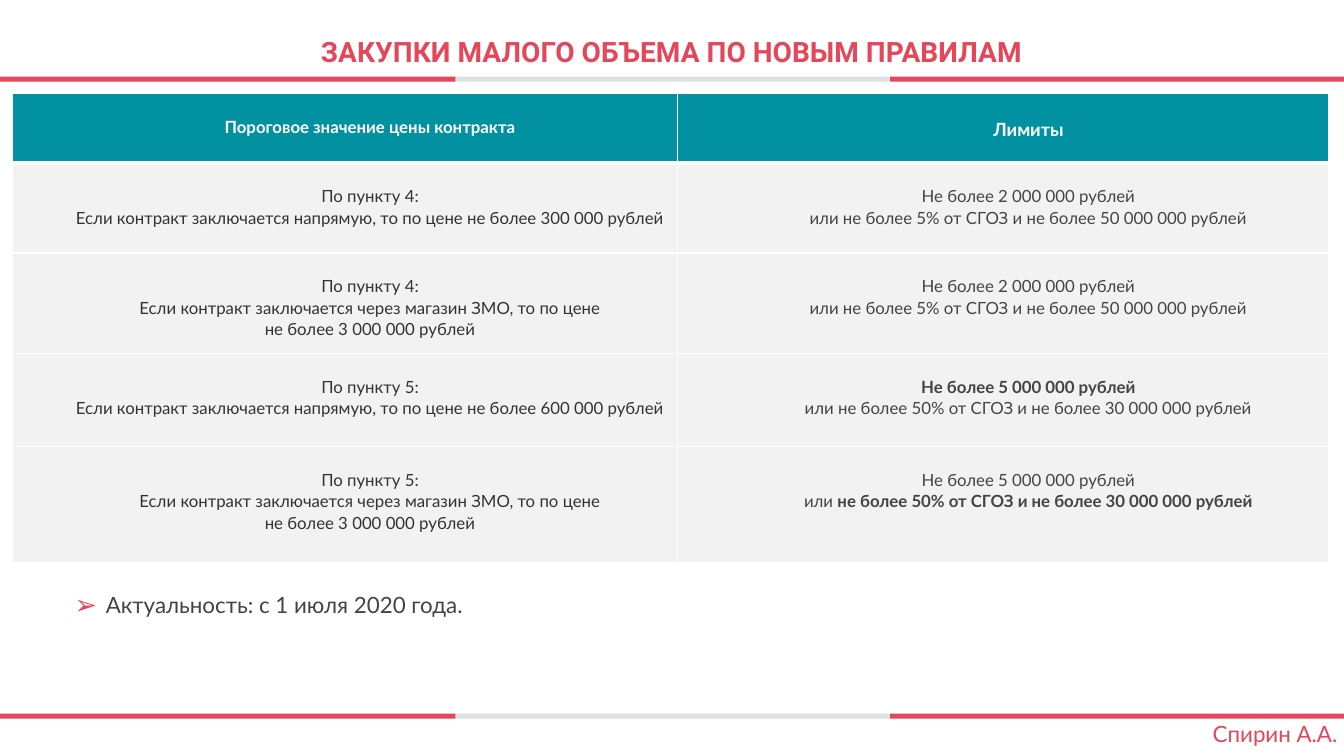
from pptx import Presentation, util as u
from pptx.dml.color import RGBColor
from pptx.enum import shapes, text
from pptx.oxml import parse_xml
from pptx.oxml.ns import nsdecls

WIDTH, HEIGHT = 13.33, 7.5
COLORS = {"red": "E4465A", "grey": "DBE1E4", "teal": "0291A0", "row": "F2F2F2",
          "white": "FFFFFF", "dark": "333333", "text": "444444"}
BAND_STOPS = (0, 4.52, 8.83, WIDTH)
COLUMNS = (6.6, 6.46)
ROWS = (0.69, 0.89, 1, 0.92, 1.15)
CELL_LINE = 1.07  # line spacing

HEADINGS = (("Пороговое значение цены контракта", 12), ("Лимиты", 13))
DIRECT = "Если контракт заключается напрямую, то по цене не более {} 000 рублей"
SHOP = ("Если контракт заключается через магазин ЗМО, то по цене",
        "не более 3 000 000 рублей")
LIMIT_4 = ([("Не более 2 000 000 рублей", False)],
           [("или не более 5% от СГОЗ и не более 50 000 000 рублей", False)])
SUM_5 = "Не более 5 000 000 рублей"
SHARE_5 = "не более 50% от СГОЗ и не более 30 000 000 рублей"

# Each row: threshold lines, then limit lines made of (text, bold) runs
RULES = (
    (("По пункту 4:", DIRECT.format(300)), LIMIT_4),
    (("По пункту 4:", *SHOP), LIMIT_4),
    (("По пункту 5:", DIRECT.format(600)),
     ([(SUM_5, True)], [("или " + SHARE_5, False)])),
    (("По пункту 5:", *SHOP),
     ([(SUM_5, False)], [("или ", False), (SHARE_5, True)])),
)


def rgb(name):
    return RGBColor.from_string(COLORS[name])


def place(shape, left, top, width, height):
    shape.left, shape.top = u.Inches(left), u.Inches(top)
    shape.width, shape.height = u.Inches(width), u.Inches(height)


def add_run(paragraph, words, size, color, bold=False, font="Lato"):
    run = paragraph.add_run()
    run.text = words
    run.font.name, run.font.size, run.font.bold = font, u.Pt(size), bold
    run.font.color.rgb = rgb(color)


def set_indent(paragraph, left, first=0):
    properties = paragraph._p.get_or_add_pPr()
    properties.set("marL", str(u.Inches(left)))
    properties.set("indent", str(u.Inches(first)))
    return properties


def add_band(slide, top, height=0.05):
    """Red, grey and red strip across the slide."""
    for left, right, color in zip(BAND_STOPS, BAND_STOPS[1:], ("red", "grey", "red")):
        strip = slide.shapes.add_shape(
            shapes.MSO_SHAPE.RECTANGLE, u.Inches(left), u.Inches(top),
            u.Inches(right - left), u.Inches(height))
        strip.shadow.inherit = False
        strip.fill.solid()
        strip.fill.fore_color.rgb = rgb(color)
        strip.line.fill.background()


def fill_title(title, box):
    place(title, *box)
    frame = title.text_frame
    frame.word_wrap = True
    frame.auto_size = text.MSO_AUTO_SIZE.NONE
    frame.vertical_anchor = text.MSO_ANCHOR.MIDDLE
    paragraph = frame.paragraphs[0]
    paragraph.alignment = text.PP_ALIGN.CENTER
    paragraph.line_spacing = 0.9
    add_run(paragraph, "ЗАКУПКИ МАЛОГО ОБЪЕМА ПО НОВЫМ ПРАВИЛАМ", 20, "red", True, "Roboto")


def fill_cell(cell, lines, size, color, fill, bottom=1):
    """Write lines of (text, bold) runs, one line below the cell's top."""
    cell.margin_left = cell.margin_right = u.Inches(0.04)
    cell.margin_top = u.Pt(size * 1.2 * CELL_LINE)
    cell.margin_bottom = 0
    frame = cell.text_frame
    for index, runs in enumerate(lines):
        paragraph = frame.add_paragraph() if index else frame.paragraphs[0]
        set_indent(paragraph, 0.5)
        paragraph.alignment = text.PP_ALIGN.CENTER
        paragraph.line_spacing = CELL_LINE
        for words, bold in runs:
            add_run(paragraph, words, size, color, bold)
    # Borders come before the fill
    properties = cell._tc.get_or_add_tcPr()
    for side, weight in zip("LRTB", (1, 1, 1, bottom)):
        properties.append(parse_xml(
            f'<a:ln{side} {nsdecls("a")} w="{u.Pt(weight)}"><a:solidFill>'
            f'<a:srgbClr val="{COLORS["white"]}"/></a:solidFill></a:ln{side}>'))
    cell.fill.solid()
    cell.fill.fore_color.rgb = rgb(fill)


def add_rules_table(slide, left, top):
    table = slide.shapes.add_table(
        len(ROWS), len(COLUMNS), u.Inches(left), u.Inches(top),
        u.Inches(sum(COLUMNS)), u.Inches(sum(ROWS))).table
    table.horz_banding = False
    for column, width in zip(table.columns, COLUMNS):
        column.width = u.Inches(width)
    for row, height in zip(table.rows, ROWS):
        row.height = u.Inches(height)
    for index, (heading, size) in enumerate(HEADINGS):
        fill_cell(table.cell(0, index), [[(heading, True)]], size, "white", "teal", 3)
    for index, (threshold, limit) in enumerate(RULES, 1):
        plain = [[(line, False)] for line in threshold]
        fill_cell(table.cell(index, 0), plain, 12, "dark", "row")
        fill_cell(table.cell(index, 1), limit, 12, "text", "row")


def fill_note(body, box):
    place(body, *box)
    frame = body.text_frame
    frame.word_wrap = True
    frame.auto_size = text.MSO_AUTO_SIZE.NONE
    paragraph = frame.paragraphs[0]
    paragraph.level = 1
    paragraph.alignment = text.PP_ALIGN.JUSTIFY
    paragraph.space_before = u.Pt(0)
    properties = set_indent(paragraph, 0.31, -0.31)
    for bullet in (f'<a:buClr {nsdecls("a")}><a:srgbClr val="{COLORS["red"]}"/></a:buClr>',
                   f'<a:buSzPct {nsdecls("a")} val="120000"/>',
                   f'<a:buFont {nsdecls("a")} typeface="Wingdings"/>'.replace("Wingdings", "Lato"),
                   f'<a:buChar {nsdecls("a")} char="➢"/>'):
        properties.append(parse_xml(bullet))
    add_run(paragraph, "Актуальность: с 1 июля 2020 года.", 16, "text")


def add_author(slide, box):
    author = slide.shapes.add_textbox(*map(u.Inches, box))
    author.text_frame.word_wrap = False
    add_run(author.text_frame.paragraphs[0], "Спирин А.А.", 16, "red")


def main():
    presentation = Presentation()
    presentation.slide_width = u.Inches(WIDTH)
    presentation.slide_height = u.Inches(HEIGHT)
    slide = presentation.slides.add_slide(presentation.slide_layouts[1])
    for top in (0.76, 7.08):
        add_band(slide, top)
    add_rules_table(slide, 0.12, 0.93)
    fill_title(slide.shapes.title, (2.14, 0.15, 9.04, 0.76))
    fill_note(slide.placeholders[1], (0.64, 5.81, 11.31, 0.37))
    add_author(slide, (11.93, 7.1, 1.44, 0.37))
    presentation.save("out.pptx")


if __name__ == "__main__":
    main()
